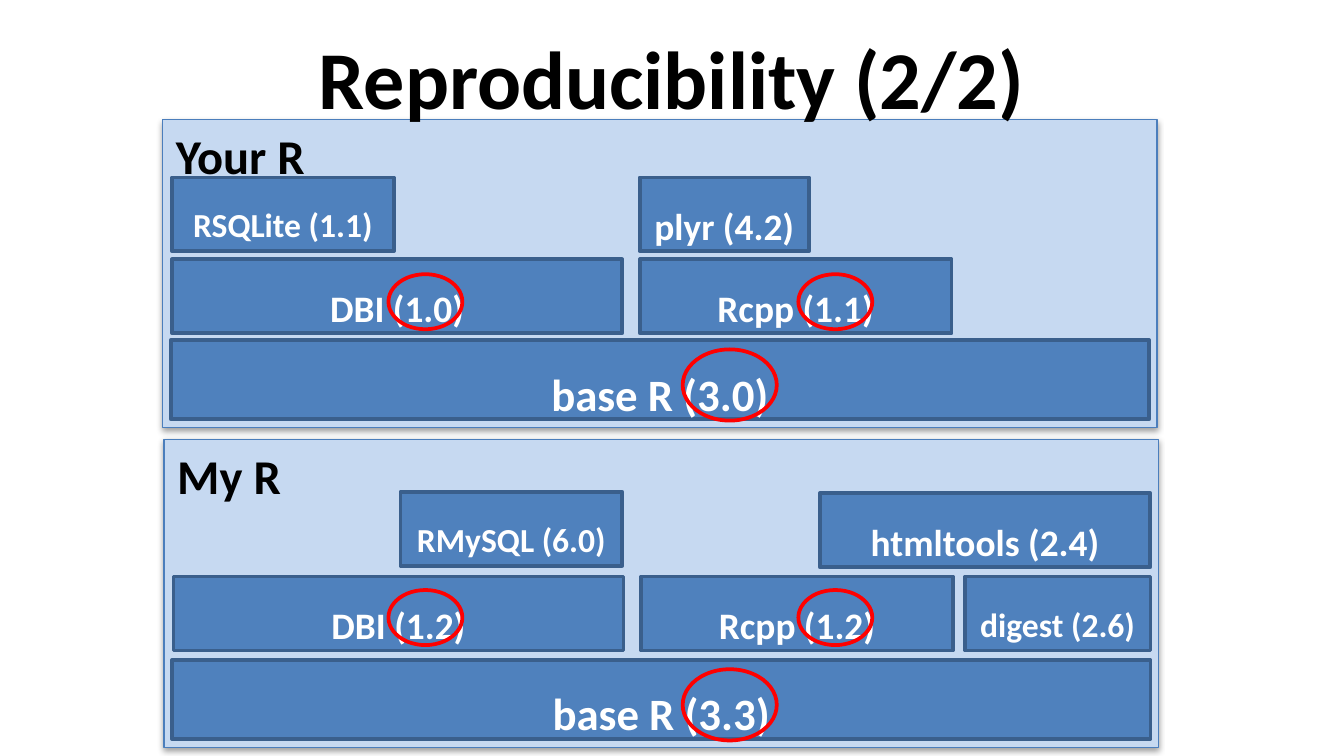
import pptx
import pptx.util
import pptx.dml.color
import pptx.enum.shapes
import pptx.enum.text
import lxml.etree

Inches = pptx.util.Inches
Pt = pptx.util.Pt
MSO_SHAPE = pptx.enum.shapes.MSO_SHAPE
PP_ALIGN = pptx.enum.text.PP_ALIGN
MSO_ANCHOR = pptx.enum.text.MSO_ANCHOR

presentation = pptx.Presentation()
presentation.slide_width = Inches(10)
presentation.slide_height = Inches(5.625)
slide = presentation.slides.add_slide(presentation.slide_layouts[6])


def rgb(value):
    return pptx.dml.color.RGBColor.from_string(value)


def write(shape, text, size, color, align, anchor):
    frame = shape.text_frame
    frame.word_wrap = True
    frame.vertical_anchor = anchor
    paragraph = frame.paragraphs[0]
    paragraph.text = text
    paragraph.alignment = align
    font = paragraph.runs[0].font
    font.name = "Calibri"
    font.size = Pt(size)
    font.bold = True
    font.color.rgb = rgb(color)
    return paragraph


SHADOW = (
    '<a:effectLst xmlns:a="http://schemas.openxmlformats.org/drawingml/2006/main">'
    '<a:outerShdw blurRad="39370" dist="20320" dir="5400000" rotWithShape="0">'
    '<a:srgbClr val="000000"><a:alpha val="38000"/></a:srgbClr>'
    "</a:outerShdw></a:effectLst>"
)

for label, left, top in [("Your R", 1.21, 0.89), ("My R", 1.22, 3.27)]:
    panel = slide.shapes.add_shape(
        MSO_SHAPE.RECTANGLE, Inches(left), Inches(top), Inches(7.4), Inches(2.29))
    panel.fill.solid()
    panel.fill.fore_color.rgb = rgb("C6D9F1")
    panel.line.color.rgb = rgb("4B7EBC")
    panel.line.width = Pt(0.75)
    panel._element.spPr.append(lxml.etree.fromstring(SHADOW))
    write(panel, label, 26, "000000", PP_ALIGN.LEFT, MSO_ANCHOR.TOP)

title = slide.shapes.add_textbox(Inches(0.5), Inches(0.1), Inches(9), Inches(0.94))
write(title, "Reproducibility (2/2)", 44, "000000", PP_ALIGN.CENTER, MSO_ANCHOR.MIDDLE)

packages = [
    ("base R (3.0)", 1.27, 2.53, 7.28, 0.59, 24),
    ("DBI (1.0)", 1.28, 1.93, 3.35, 0.55, 20),
    ("RSQLite (1.1)", 1.28, 1.32, 1.65, 0.55, 18),
    ("Rcpp (1.1)", 4.76, 1.93, 2.32, 0.55, 20),
    ("plyr (4.2)", 4.76, 1.32, 1.26, 0.55, 20),
    ("base R (3.3)", 1.28, 4.91, 7.28, 0.59, 24),
    ("DBI (1.2)", 1.29, 4.29, 3.35, 0.55, 20),
    ("RMySQL (6.0)", 2.98, 3.66, 1.65, 0.55, 18),
    ("Rcpp (1.2)", 4.77, 4.29, 2.32, 0.55, 20),
    ("htmltools (2.4)", 6.1, 3.67, 2.46, 0.55, 20),
    ("digest (2.6)", 7.18, 4.29, 1.38, 0.55, 18),
]
for label, left, top, width, height, size in packages:
    package_box = slide.shapes.add_shape(
        MSO_SHAPE.RECTANGLE, Inches(left), Inches(top), Inches(width), Inches(height))
    package_box.shadow.inherit = False
    package_box.fill.solid()
    package_box.fill.fore_color.rgb = rgb("4F81BD")
    package_box.line.color.rgb = rgb("3A5F8C")
    package_box.line.width = Pt(2)
    name = write(package_box, label, size, "FFFFFF", PP_ALIGN.CENTER, MSO_ANCHOR.MIDDLE)
    name.line_spacing = 1.5

version_columns = [
    (5.94, (4.39, 2.04), 0.55, 0.41),
    (5.08, (4.98, 2.6), 0.7, 0.53),
    (2.89, (4.39, 2.04), 0.55, 0.41),
]
for left, tops, width, height in version_columns:
    for top in tops:
        version_ring = slide.shapes.add_shape(
            MSO_SHAPE.OVAL, Inches(left), Inches(top), Inches(width), Inches(height))
        version_ring.shadow.inherit = False
        version_ring.fill.background()
        version_ring.line.color.rgb = rgb("FF0000")
        version_ring.line.width = Pt(2)

presentation.save("out.pptx")
